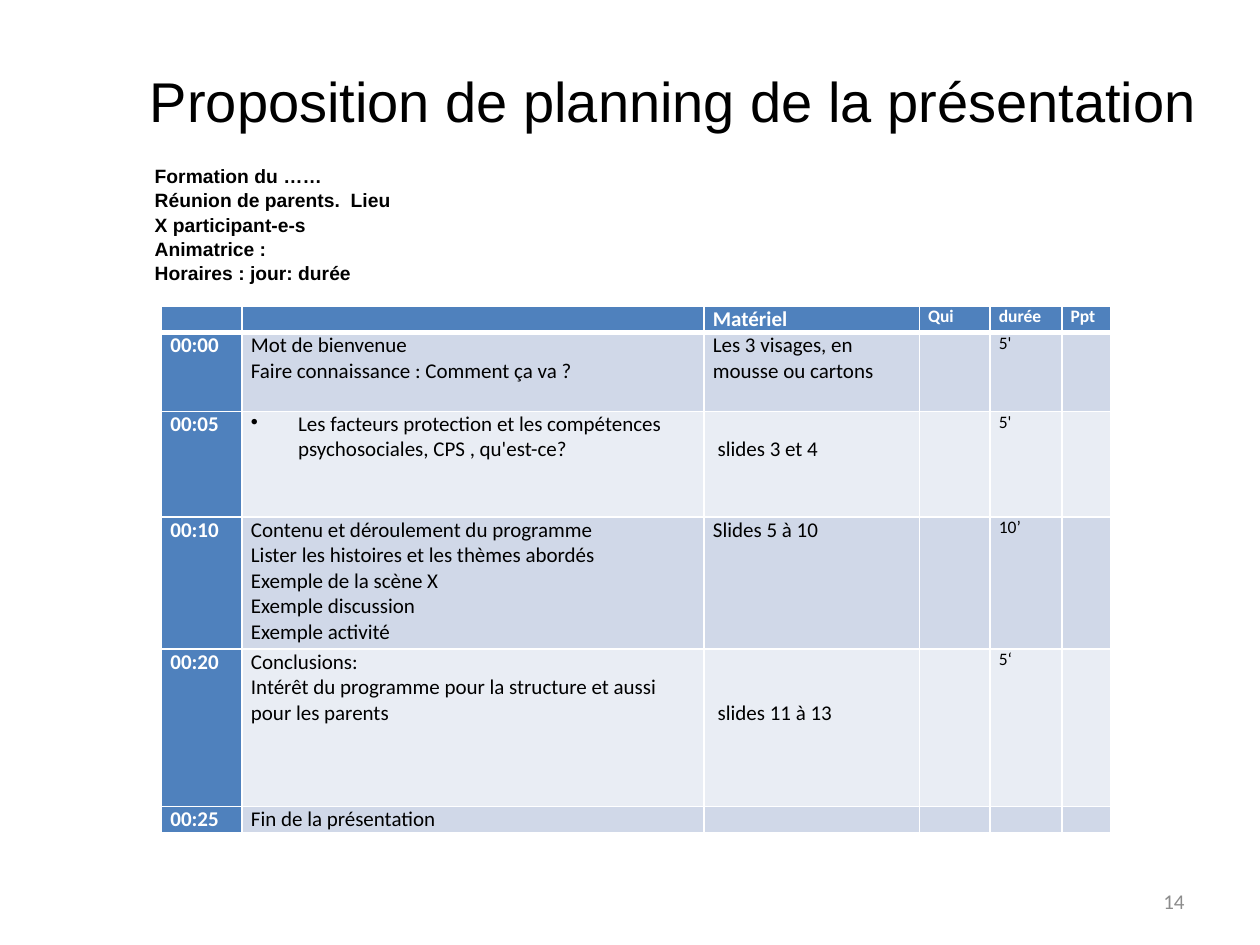
import pptx
import pptx.util
import pptx.dml.color
import pptx.enum.text
import pptx.oxml.ns
from dataclasses import dataclass
from lxml import etree

Pt = pptx.util.Pt
RGB = pptx.dml.color.RGBColor.from_string
Align = pptx.enum.text.PP_ALIGN
Anchor = pptx.enum.text.MSO_ANCHOR
qn = pptx.oxml.ns.qn

# Content
TITLE = "Proposition de planning de la présentation"
INFO = ["Formation du ……", "Réunion de parents.  Lieu", "X participant-e-s",
        "Animatrice :", "Horaires : jour: durée"]
PAGE = "14"
HEAD = ["", "", "Matériel", "Qui", "durée", "Ppt"]
# Time, steps, material, who, length, slides
PLAN = [
    ["00:00", "Mot de bienvenue\nFaire connaissance : Comment ça va ?",
     "Les 3 visages, en mousse ou cartons", "", "5'", ""],
    ["00:05", "Les facteurs protection et les compétences "
     "psychosociales, CPS , qu'est-ce?", "slides 3 et 4", "", "5'", ""],
    ["00:10", "Contenu et déroulement du programme\n"
     "Lister les histoires et les thèmes abordés\nExemple de la scène X\n"
     "Exemple discussion\nExemple activité", "Slides 5 à 10", "", "10’", ""],
    ["00:20", "Conclusions:\nIntérêt du programme pour la structure "
     "et aussi pour les parents", "slides 11 à 13", "", "5‘", ""],
    ["00:25", "Fin de la présentation", "", "", "", ""],
]
DROP = {(2, 2): 1, (4, 2): 2}  # cells set lower, in text lines
BULLET = (2, 1)
COLS = [46, 264, 123, 40.4, 41, 28]
ROWS = [15.12, 45, 60.4, 75.5, 90, 15.12]


@dataclass
class Theme:
    sans: str = "Arial"
    text: str = "Calibri"
    black: str = "000000"
    white: str = "FFFFFF"
    grey: str = "8C8C8C"
    blue: str = "4F81BD"
    odd: str = "D0D8E8"
    even: str = "E9EDF4"
    title: float = 32
    info: float = 11
    cell: float = 12
    small: float = 10
    line: float = 14.65


T = Theme()


def style(par, face, size, color, bold=False):
    for run in par.runs:
        font = run.font
        font.name, font.size, font.bold = face, Pt(size), bold
        font.color.rgb = RGB(color)


def place(shape, left, top, width, height):
    shape.left, shape.top = Pt(left), Pt(top)
    shape.width, shape.height = Pt(width), Pt(height)
    frame = shape.text_frame
    frame.word_wrap = True
    frame.auto_size = pptx.enum.text.MSO_AUTO_SIZE.NONE
    frame.vertical_anchor = Anchor.MIDDLE
    return frame


def indent(par, left, first, mark=None):
    prop = par._p.get_or_add_pPr()
    prop.set("marL", str(Pt(left)))
    prop.set("indent", str(Pt(first)))
    if mark:
        etree.SubElement(prop, qn("a:buChar"), char=mark)
    else:
        etree.SubElement(prop, qn("a:buNone"))


def border(cell, **sides):
    prop = cell._tc.get_or_add_tcPr()
    for side, width in sides.items():
        line = etree.SubElement(prop, qn("a:ln" + side), w=str(Pt(width)))
        fill = etree.SubElement(line, qn("a:solidFill"))
        etree.SubElement(fill, qn("a:srgbClr"), val=T.white)


def fill_cell(cell, text, row, col):
    drop = DROP.get((row, col), 0)
    cell.margin_left = Pt(5 + (2.7 if drop else 0))
    cell.margin_right = Pt(5)
    cell.margin_top, cell.margin_bottom = Pt(drop * T.line), 0
    border(cell, L=1, R=1, T=3 if row == 1 else 1, B=1 if row else 3)
    key = row == 0 or col == 0
    cell.fill.solid()
    cell.fill.fore_color.rgb = RGB(
        T.blue if key else T.odd if row % 2 else T.even)
    size = T.small if col > 2 else T.cell
    cell.text_frame.text = text
    for par in cell.text_frame.paragraphs:
        if (row, col) == BULLET:
            indent(par, 27, -27, "•")
        style(par, T.text, size, T.white if key else T.black, key)
        if not text:  # keeps blank cells from growing the row
            etree.SubElement(par._p, qn("a:endParaRPr"), sz=str(size * 100))


deck = pptx.Presentation()
deck.slide_width, deck.slide_height = Pt(720), Pt(540)
slide = deck.slides.add_slide(deck.slide_layouts[1])

# Title
title = slide.shapes.title
frame = place(title, 78.5, 34, 618.5, 46)
frame.text = TITLE
frame.paragraphs[0].alignment = Align.LEFT
style(frame.paragraphs[0], T.sans, T.title, T.black)

# Session details
frame = place(slide.placeholders[1], 81.2, 91, 556.5, 74)
frame.text = "\n".join(INFO)
for par in frame.paragraphs:
    par.space_before = Pt(0)
    par.line_spacing = 1.05
    indent(par, 0, 0)
    style(par, T.sans, T.info, T.black, True)

# Schedule
table = slide.shapes.add_table(len(ROWS), len(COLS), Pt(92.4), Pt(175),
                               Pt(sum(COLS)), Pt(sum(ROWS))).table
table.first_col = True
for col, width in zip(table.columns, COLS):
    col.width = Pt(width)
for row, height in zip(table.rows, ROWS):
    row.height = Pt(height)
for r, line in enumerate([HEAD] + PLAN):
    for c, text in enumerate(line):
        fill_cell(table.cell(r, c), text, r, c)

# Page number
frame = place(slide.shapes.add_textbox(0, 0, 0, 0), 516, 500.5, 168, 28.8)
frame.text = PAGE
frame.paragraphs[0].alignment = Align.RIGHT
style(frame.paragraphs[0], T.text, T.cell, T.grey)

deck.save("out.pptx")
